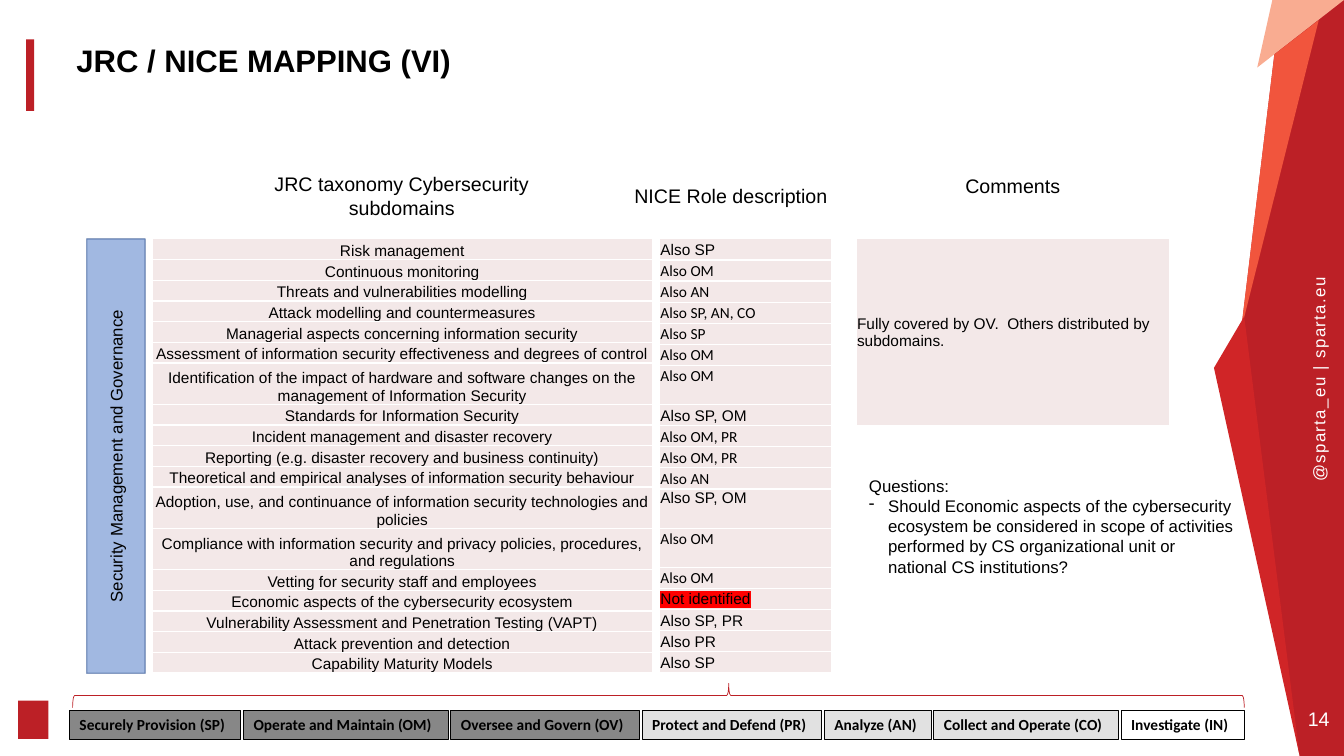
from dataclasses import dataclass

import lxml.etree
import pptx
import pptx.dml.color
import pptx.enum.shapes
import pptx.enum.text
import pptx.oxml
import pptx.oxml.ns
import pptx.util

Inches = pptx.util.Inches
Pt = pptx.util.Pt
RGBColor = pptx.dml.color.RGBColor
Shape = pptx.enum.shapes.MSO_SHAPE
Anchor = pptx.enum.text.MSO_ANCHOR
Align = pptx.enum.text.PP_ALIGN
AutoSize = pptx.enum.text.MSO_AUTO_SIZE
qn = pptx.oxml.ns.qn

BLACK = RGBColor(0x00, 0x00, 0x00)
WHITE = RGBColor(0xFF, 0xFF, 0xFF)
CRIMSON = RGBColor(0xBC, 0x20, 0x26)
RED = RGBColor(0xD0, 0x25, 0x27)
ORANGE = RGBColor(0xF1, 0x55, 0x3D)
PEACH = RGBColor(0xF9, 0xAC, 0x91)
CELL_PINK = RGBColor(0xF3, 0xE8, 0xE8)
BLUE = RGBColor(0x44, 0x72, 0xC4)
NAVY = RGBColor(0x2F, 0x52, 0x8F)
DARK_GREY = RGBColor(0x87, 0x87, 0x87)
LIGHT_GREY = RGBColor(0xE1, 0xE1, 0xE1)

TABLE_TOP, TABLE_HEIGHT = 2.37, 4.31
CATEGORY_LEFT, CATEGORY_RIGHT = 0.69, 12.34


@dataclass
class Facet:
    color: RGBColor
    points: list[tuple[float, float]]


@dataclass
class Mapping:
    subdomain: str
    role: str
    role_font: str = "Calibri"
    lines: int = 1


@dataclass
class Category:
    label: str
    width: float
    fill: RGBColor


FACETS = [
    Facet(CRIMSON, [(13.33, 0), (13.33, 7.5), (12.89, 7.5), (12.23, 3.94), (12.64, 0.54), (12.76, 0)]),
    Facet(PEACH, [(13.33, 0), (12.47, 0.67), (12.62, 0)]),
    Facet(ORANGE, [(13.08, 0.2), (12.31, 3.27), (12.64, 0.54)]),
    Facet(RED, [(12.34, 3.14), (12.89, 7.5), (12.04, 3.65)]),
]

MAPPINGS = [
    Mapping("Risk management", "Also SP", "Arial"),
    Mapping("Continuous monitoring", "Also OM"),
    Mapping("Threats and vulnerabilities modelling", "Also AN"),
    Mapping("Attack modelling and countermeasures", "Also SP, AN, CO"),
    Mapping("Managerial aspects concerning information security", "Also SP"),
    Mapping("Assessment of information security effectiveness and degrees of control", "Also OM"),
    Mapping("Identification of the impact of hardware and software changes on the "
            "management of Information Security", "Also OM", lines=2),
    Mapping("Standards for Information Security", "Also SP, OM", "Arial"),
    Mapping("Incident management and disaster recovery", "Also OM, PR"),
    Mapping("Reporting (e.g. disaster recovery and business continuity)", "Also OM, PR"),
    Mapping("Theoretical and empirical analyses of information security behaviour", "Also AN"),
    Mapping("Adoption, use, and continuance of information security technologies and policies",
            "Also SP, OM", "Arial", 2),
    Mapping("Compliance with information security and privacy policies, procedures, and regulations",
            "Also OM", lines=2),
    Mapping("Vetting for security staff and employees", "Also OM"),
    Mapping("Economic aspects of the cybersecurity ecosystem", "Not identified", "Arial"),
    Mapping("Vulnerability Assessment and Penetration Testing (VAPT)", "Also SP, PR", "Arial"),
    Mapping("Attack prevention and detection", "Also PR", "Arial"),
    Mapping("Capability Maturity Models", "Also SP", "Arial"),
]

CATEGORIES = [
    Category("Securely Provision (SP)", 1.7, DARK_GREY),
    Category("Operate and Maintain (OM)", 2.03, DARK_GREY),
    Category("Oversee and Govern (OV)", 1.87, DARK_GREY),
    Category("Protect and Defend (PR)", 1.78, LIGHT_GREY),
    Category("Analyze (AN)", 1.06, LIGHT_GREY),
    Category("Collect and Operate (CO)", 1.83, LIGHT_GREY),
    Category("Investigate (IN)", 1.22, WHITE),
]


def style(paragraph, size: float, color: RGBColor = BLACK, font: str = "Arial",
          bold: bool = False, align=Align.LEFT) -> None:
    paragraph.alignment = align
    for run in paragraph.runs:
        run.font.size, run.font.name, run.font.bold = Pt(size), font, bold
        run.font.color.rgb = color


def add_text(slide, text: str, box: tuple, size: float, color: RGBColor = BLACK, bold: bool = False,
             align=Align.LEFT, anchor=Anchor.TOP, tight: bool = False):
    """Add a text box; a tight one has no insets and does not wrap."""
    textbox = slide.shapes.add_textbox(*map(Inches, box))
    frame = textbox.text_frame
    frame.word_wrap = not tight
    frame.vertical_anchor = anchor
    if tight:
        frame.margin_left = frame.margin_right = frame.margin_top = frame.margin_bottom = 0
    frame.text = text
    for paragraph in frame.paragraphs:
        style(paragraph, size, color, bold=bold, align=align)
    return textbox


def add_preset(slide, preset, box: tuple, fill: RGBColor | None, line: RGBColor | None = None,
               width: float = 0.75):
    shape = slide.shapes.add_shape(preset, *map(Inches, box))
    shape.shadow.inherit = False
    if fill is None:
        shape.fill.background()
    else:
        shape.fill.solid()
        shape.fill.fore_color.rgb = fill
    if line is None:
        shape.line.fill.background()
    else:
        shape.line.color.rgb = line
        shape.line.width = Pt(width)
    return shape


def add_facet(slide, facet: Facet) -> None:
    start, *rest = [(Inches(x), Inches(y)) for x, y in facet.points]
    builder = slide.shapes.build_freeform(*start)
    builder.add_line_segments(rest, close=True)
    shape = builder.convert_to_shape()
    shape.shadow.inherit = False
    shape.fill.solid()
    shape.fill.fore_color.rgb = facet.color
    shape.line.fill.background()


def add_column(slide, left: float, top: float, width: float, heights: list[float]):
    """Add a one-column table and return its cells."""
    table = slide.shapes.add_table(len(heights), 1, Inches(left), Inches(top),
                                   Inches(width), Inches(sum(heights))).table
    table.first_row = table.horz_banding = False
    table.columns[0].width = Inches(width)
    for row, height in zip(table.rows, heights):
        row.height = Inches(height)
    return [row.cells[0] for row in table.rows]


def fill_cell(cell, text: str, font: str = "Arial", align=Align.LEFT, anchor=Anchor.MIDDLE) -> None:
    properties = cell._tc.get_or_add_tcPr()
    for side in ("a:lnL", "a:lnR", "a:lnT", "a:lnB"):
        border = lxml.etree.SubElement(properties, qn(side), w=str(Pt(1)))
        solid = lxml.etree.SubElement(border, qn("a:solidFill"))
        lxml.etree.SubElement(solid, qn("a:srgbClr"), val=str(WHITE))
    cell.fill.solid()
    cell.fill.fore_color.rgb = CELL_PINK
    cell.margin_left = cell.margin_right = cell.margin_top = Inches(0.01)
    cell.margin_bottom = 0
    cell.vertical_anchor = anchor
    cell.text_frame.text = text
    style(cell.text_frame.paragraphs[0], 11, font=font, align=align)


def row_heights(double: float) -> list[float]:
    """Share the table height among single rows, given the height of a two-line row."""
    doubles = sum(mapping.lines == 2 for mapping in MAPPINGS)
    single = (TABLE_HEIGHT - doubles * double) / (len(MAPPINGS) - doubles)
    return [double if mapping.lines == 2 else single for mapping in MAPPINGS]


def highlight(run, color: str) -> None:
    mark = lxml.etree.Element(qn("a:highlight"))
    lxml.etree.SubElement(mark, qn("a:srgbClr"), val=color)
    run._r.rPr.find(qn("a:solidFill")).addnext(mark)


def add_frame(slide) -> None:
    """Add the decoration, side text, page number and title."""
    for facet in FACETS:
        add_facet(slide, facet)
    handle = add_text(slide, "@sparta_eu | sparta.eu", (12.05, 3.65, 2.06, 0.2), 12, WHITE,
                      anchor=Anchor.MIDDLE, tight=True)
    handle.rotation = 270
    handle.text_frame.paragraphs[0].runs[0]._r.rPr.set("spc", "100")
    add_text(slide, "14", (12.96, 7.01, 0.24, 0.24), 14, WHITE, align=Align.CENTER,
             anchor=Anchor.MIDDLE, tight=True)
    add_preset(slide, Shape.RECTANGLE, (0.26, 0.39, 0.08, 0.71), CRIMSON)
    add_preset(slide, Shape.RECTANGLE, (0.18, 6.95, 0.3, 0.38), CRIMSON)
    title = add_text(slide, "JRC / NICE MAPPING (VI)", (0.66, 0.41, 11.34, 0.42), 22.2, bold=True,
                     anchor=Anchor.BOTTOM)
    title.text_frame.paragraphs[0].line_spacing = 0.8


def add_mapping(slide) -> None:
    for heading, box in (("JRC taxonomy Cybersecurity subdomains", (2.61, 1.66, 2.75, 0.57)),
                         ("NICE Role description", (6.12, 1.78, 2.26, 0.34)),
                         ("Comments", (8.49, 1.68, 3.11, 0.34))):
        add_text(slide, heading, box, 14, align=Align.CENTER)
    domain = add_preset(slide, Shape.RECTANGLE, (0.86, TABLE_TOP, 0.58, TABLE_HEIGHT), BLUE, NAVY, 1)
    for color in domain._element.spPr.iter(qn("a:srgbClr")):
        lxml.etree.SubElement(color, qn("a:alpha"), val="50000")
    domain.text_frame.text = "Security Management and Governance"
    domain.text_frame._txBody.bodyPr.set("vert", "vert270")
    style(domain.text_frame.paragraphs[0], 12, align=Align.CENTER)

    subdomains = add_column(slide, 1.51, TABLE_TOP, 4.96, row_heights(0.41))
    roles = add_column(slide, 6.54, TABLE_TOP, 1.71, row_heights(0.39))
    for mapping, subdomain, role in zip(MAPPINGS, subdomains, roles):
        fill_cell(subdomain, mapping.subdomain, align=Align.CENTER, anchor=Anchor.BOTTOM)
        fill_cell(role, mapping.role, mapping.role_font,
                  anchor=Anchor.TOP if mapping.lines == 2 else Anchor.MIDDLE)
        if mapping.role == "Not identified":
            highlight(role.text_frame.paragraphs[0].runs[0], "FF0000")
    comment, = add_column(slide, 8.49, TABLE_TOP, 3.11, [1.85])
    fill_cell(comment, "Fully covered by OV.  Others distributed by subdomains.")


def add_questions(slide) -> None:
    questions = add_text(
        slide, "Questions:\nShould Economic aspects of the cybersecurity ecosystem be considered in scope "
        "of activities performed by CS organizational unit or national CS institutions?",
        (8.52, 4.67, 3.82, 1.11), 12)
    properties = questions.text_frame.paragraphs[1]._p.get_or_add_pPr()
    properties.set("marL", str(Inches(0.19)))
    properties.set("indent", str(-Inches(0.19)))
    lxml.etree.SubElement(properties, qn("a:buChar"), char="-")


def add_categories(slide) -> None:
    brace = add_preset(slide, Shape.LEFT_BRACE, (6.41, 1.09, 0.24, 11.62), None, CRIMSON, 0.5)
    brace.rotation = 90
    brace.adjustments[0], brace.adjustments[1] = 0.08, 0.44
    widths = sum(category.width for category in CATEGORIES)
    gap = (CATEGORY_RIGHT - CATEGORY_LEFT - widths) / (len(CATEGORIES) - 1)
    left = CATEGORY_LEFT
    for category in CATEGORIES:
        pill = add_preset(slide, Shape.RECTANGLE, (left, 7.05, category.width, 0.29), category.fill, BLACK)
        frame = pill.text_frame
        frame.word_wrap = False
        frame.auto_size = AutoSize.SHAPE_TO_FIT_TEXT
        frame.vertical_anchor = Anchor.TOP
        frame.text = category.label
        style(frame.paragraphs[0], 11, font="Calibri", bold=True)
        left += category.width + gap


def main() -> None:
    deck = pptx.Presentation()
    deck.slide_width, deck.slide_height = Inches(13.33), Inches(7.5)
    slide = deck.slides.add_slide(deck.slide_layouts[6])
    add_frame(slide)
    add_mapping(slide)
    add_questions(slide)
    add_categories(slide)
    deck.save("out.pptx")


if __name__ == "__main__":
    main()
